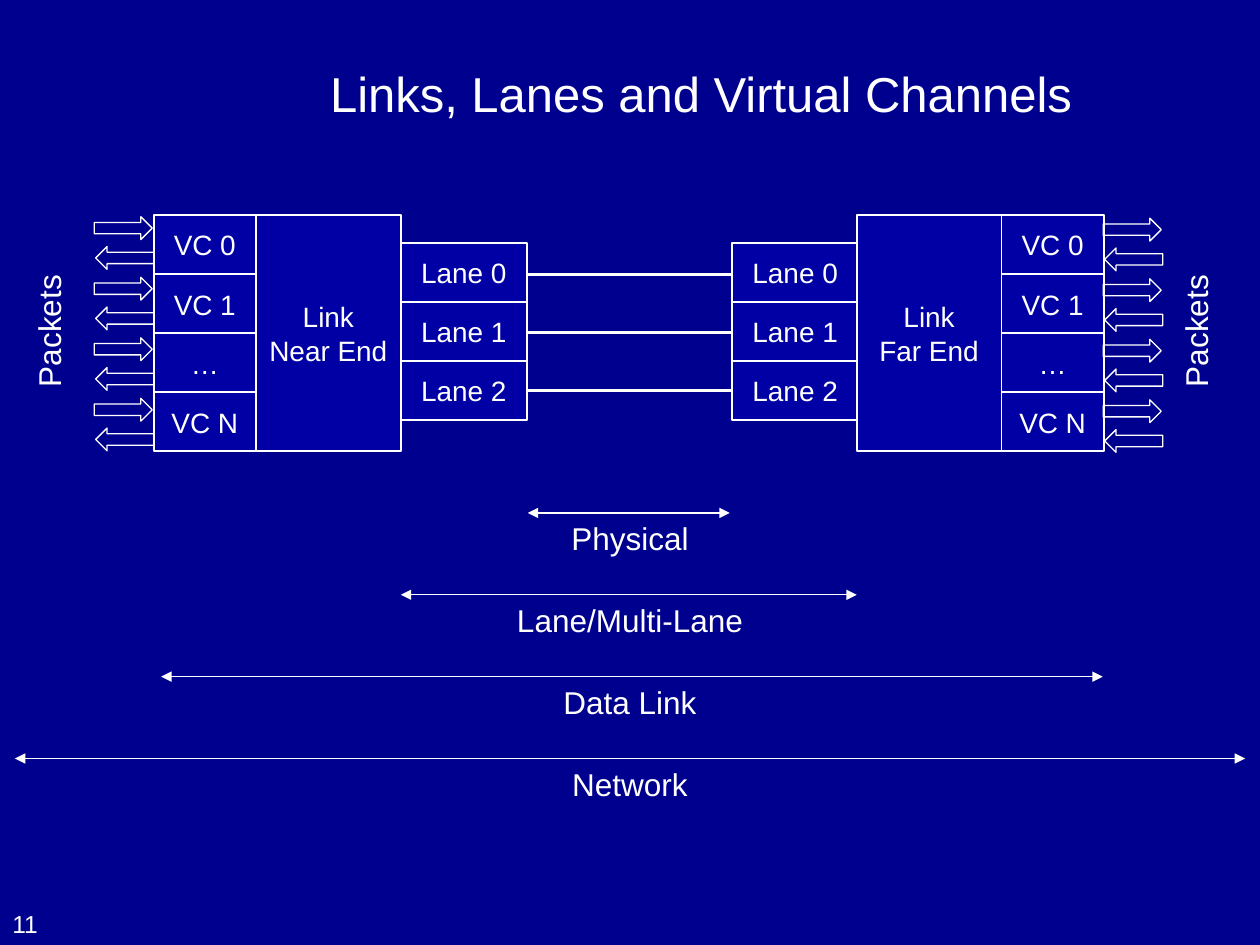
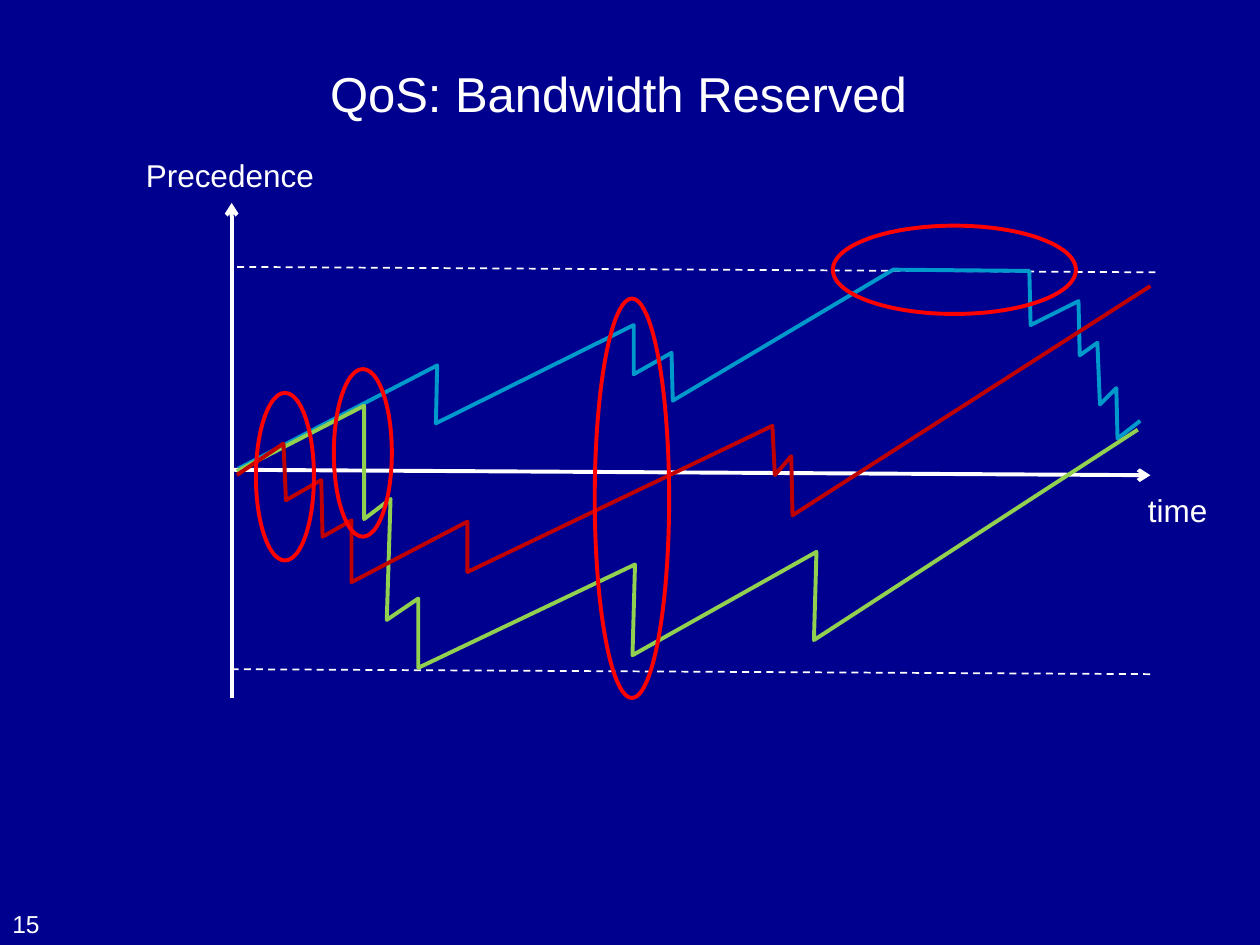
from pptx import Presentation
from pptx.dml.color import RGBColor
from pptx.enum.dml import MSO_LINE
from pptx.enum.shapes import MSO_CONNECTOR, MSO_SHAPE
from pptx.enum.text import MSO_ANCHOR, PP_ALIGN
from pptx.oxml.ns import qn
from pptx.util import Cm, Pt
from lxml.etree import SubElement

NAVY = RGBColor(0x00, 0x00, 0x8E)
BLOCK_BLUE = RGBColor(0x00, 0x00, 0xA4)
WHITE = RGBColor(0xFF, 0xFF, 0xFF)
RED = RGBColor(0xFF, 0x00, 0x00)
CYAN = RGBColor(0x00, 0x99, 0xCC)
GREEN = RGBColor(0x92, 0xD0, 0x50)
DARK_RED = RGBColor(0xC0, 0x00, 0x00)
FONT = "Arial"

BLOCK_TOP = 4.34
ROW_HEIGHT = 1.19
VC_WIDTH, LINK_WIDTH, LANE_WIDTH = 2.06, 2.92, 2.54
NEAR_VC, NEAR_LINK, NEAR_LANE = 3.1, 5.16, 8.08
FAR_LANE, FAR_LINK, FAR_VC = 14.76, 17.27, 20.19

# Left end, right end and label width of each layer
LAYERS = [
    ("Physical", 10.64, 14.71, 2.9),
    ("Lane/Multi-Lane", 8.08, 17.27, 5.1),
    ("Data Link", 3.25, 22.23, 3.23),
    ("Network", 0.3, 25.1, 2.87),
]

# Precedence traces, in hundredths of an inch
TRACES = [
    (CYAN, [(189, 372), (347, 290), (346, 336), (503, 258), (503, 297),
            (533, 280), (534, 318), (709, 214), (817, 215), (818, 258),
            (856, 239), (857, 282), (871, 272), (873, 321), (886, 308),
            (887, 348), (905, 334)]),
    (GREEN, [(188, 374), (289, 322), (289, 412), (310, 396), (307, 492),
             (332, 475), (332, 530), (504, 448), (502, 520), (648, 438),
             (646, 508), (903, 341)]),
    (DARK_RED, [(188, 377), (225, 352), (227, 397), (255, 381), (256, 426),
                (279, 413), (279, 462), (371, 414), (371, 454), (613, 338),
                (615, 377), (628, 362), (629, 409), (913, 227)]),
]
TRACE_UNIT = Cm(0.0254)

HIGHLIGHTS = [
    (6.73, 7.44, 1.17, 3.38),
    (11.99, 6.02, 1.5, 8.05),
    (16.79, 4.55, 4.9, 1.78),
    (5.16, 7.92, 1.17, 3.38),
]


def write(frame, lines, size, align=PP_ALIGN.LEFT):
    for index, text in enumerate(lines):
        para = frame.paragraphs[0] if index == 0 else frame.add_paragraph()
        para.alignment = align
        span = para.add_run()
        span.text = text
        span.font.name = FONT
        span.font.size = Pt(size)
        span.font.color.rgb = WHITE


def add_page(deck, title, number):
    page = deck.slides.add_slide(deck.slide_layouts[5])
    heading = page.shapes.title
    heading.left, heading.top = Cm(6.4), Cm(1.12)
    heading.width, heading.height = Cm(19), Cm(1.5)
    heading.text_frame.vertical_anchor = MSO_ANCHOR.MIDDLE
    write(heading.text_frame, [title], 28)
    footer = add_label(page, number, 0, 17.73, 2.69, 1.32, size=14)
    footer.text_frame.vertical_anchor = MSO_ANCHOR.BOTTOM
    return page


def add_label(page, text, left, top, width, height=1.02, size=18,
              align=PP_ALIGN.LEFT, rotation=0):
    box = page.shapes.add_textbox(Cm(left), Cm(top), Cm(width), Cm(height))
    box.rotation = rotation
    box.text_frame.word_wrap = False
    write(box.text_frame, [text], size, align)
    return box


def add_outline(page, preset, left, top, width, height, color, weight):
    """Add an unfilled preset shape."""
    shape = page.shapes.add_shape(
        preset, Cm(left), Cm(top), Cm(width), Cm(height))
    shape.shadow.inherit = False
    shape.fill.background()
    shape.line.color.rgb = color
    shape.line.width = Pt(weight)
    return shape


def add_block(page, lines, left, top, width, height=ROW_HEIGHT):
    block = add_outline(page, MSO_SHAPE.RECTANGLE, left, top, width, height,
                        WHITE, 1)
    block.fill.solid()
    block.fill.fore_color.rgb = BLOCK_BLUE
    frame = block.text_frame
    frame.margin_left = frame.margin_right = 0
    frame.vertical_anchor = MSO_ANCHOR.MIDDLE
    write(frame, lines, 16, PP_ALIGN.CENTER)


def add_stack(page, names, left, top, width):
    for row, name in enumerate(names):
        add_block(page, [name], left, top + row * ROW_HEIGHT, width)


def add_line(page, start, end, weight, head=None, tail=None, dash=None):
    line = page.shapes.add_connector(
        MSO_CONNECTOR.STRAIGHT, *(Cm(value) for value in (*start, *end)))
    line.line.color.rgb = WHITE
    line.line.width = Pt(weight)
    if dash:
        line.line.dash_style = dash
    properties = line.element.spPr
    outline = properties.find(qn("a:ln"))
    for tag, arrowhead in (("a:headEnd", head), ("a:tailEnd", tail)):
        if arrowhead:
            SubElement(outline, qn(tag), type=arrowhead)
    SubElement(properties, qn("a:effectLst"))


def add_packet_arrows(page, left, top):
    """Add one inward and one outward arrow for each virtual channel."""
    for channel in range(4):
        y = top + channel * 1.22
        add_outline(page, MSO_SHAPE.RIGHT_ARROW, left, y, 1.17, 0.46,
                    WHITE, 0.75)
        add_outline(page, MSO_SHAPE.LEFT_ARROW, left + 0.03, y + 0.6, 1.17,
                    0.46, WHITE, 0.75)


def add_trace(page, color, points):
    builder = page.shapes.build_freeform(*points[0], scale=TRACE_UNIT)
    builder.add_line_segments(points[1:], close=False)
    trace = builder.convert_to_shape()
    trace.shadow.inherit = False
    trace.fill.background()
    trace.line.color.rgb = color
    trace.line.width = Pt(2.25)


def add_links_page(deck):
    page = add_page(deck, "Links, Lanes and Virtual Channels", "11")
    channels = ["VC 0", "VC 1", "…", "VC N"]
    lanes = ["Lane 0", "Lane 1", "Lane 2"]
    ends = [
        ("Near End", NEAR_VC, NEAR_LINK, NEAR_LANE, 1.9, 4.37, -0.41),
        ("Far End", FAR_VC, FAR_LINK, FAR_LANE, 22.24, 4.4, 22.71),
    ]
    for name, vc, link, lane, arrows, arrows_top, packets in ends:
        add_stack(page, lanes, lane, 4.9, LANE_WIDTH)
        add_block(page, ["Link", name], link, BLOCK_TOP, LINK_WIDTH,
                  4 * ROW_HEIGHT)
        add_stack(page, channels, vc, BLOCK_TOP, VC_WIDTH)
        add_packet_arrows(page, arrows, arrows_top)
        add_label(page, "Packets", packets, 6.15, 2.79, rotation=270)

    for lane in range(len(lanes)):
        y = 5.53 + lane * 1.17
        add_line(page, (NEAR_LANE + LANE_WIDTH, y), (FAR_LANE, y), 1.5)

    for index, (name, left, right, width) in enumerate(LAYERS):
        y = 10.34 + index * 1.65
        add_label(page, name, 12.7 - width / 2, y, width,
                  align=PP_ALIGN.CENTER)
        add_line(page, (left, y), (right, y), 0.75, "triangle", "triangle")


def add_bandwidth_page(deck):
    page = add_page(deck, "QoS: Bandwidth Reserved", "15")
    add_line(page, (4.67, 9.47), (23.19, 9.58), 2.25, tail="arrow")
    add_label(page, "time", 22.89, 9.78, 1.73)
    add_line(page, (4.78, 5.38), (23.29, 5.49), 1, dash=MSO_LINE.DASH)
    add_line(page, (4.67, 13.49), (23.19, 13.59), 1, dash=MSO_LINE.DASH)
    for color, points in TRACES:
        add_trace(page, color, points)
    add_line(page, (4.67, 14.07), (4.67, 4.09), 2.25, tail="arrow")
    add_label(page, "Precedence", 2.69, 3.02, 4.01)
    for bounds in HIGHLIGHTS:
        add_outline(page, MSO_SHAPE.OVAL, *bounds, RED, 2.25)


def main():
    deck = Presentation()
    deck.slide_width, deck.slide_height = Cm(25.4), Cm(19.05)
    background = deck.slide_master.background.fill
    background.solid()
    background.fore_color.rgb = NAVY
    add_links_page(deck)
    add_bandwidth_page(deck)
    deck.save("out.pptx")


if __name__ == "__main__":
    main()
